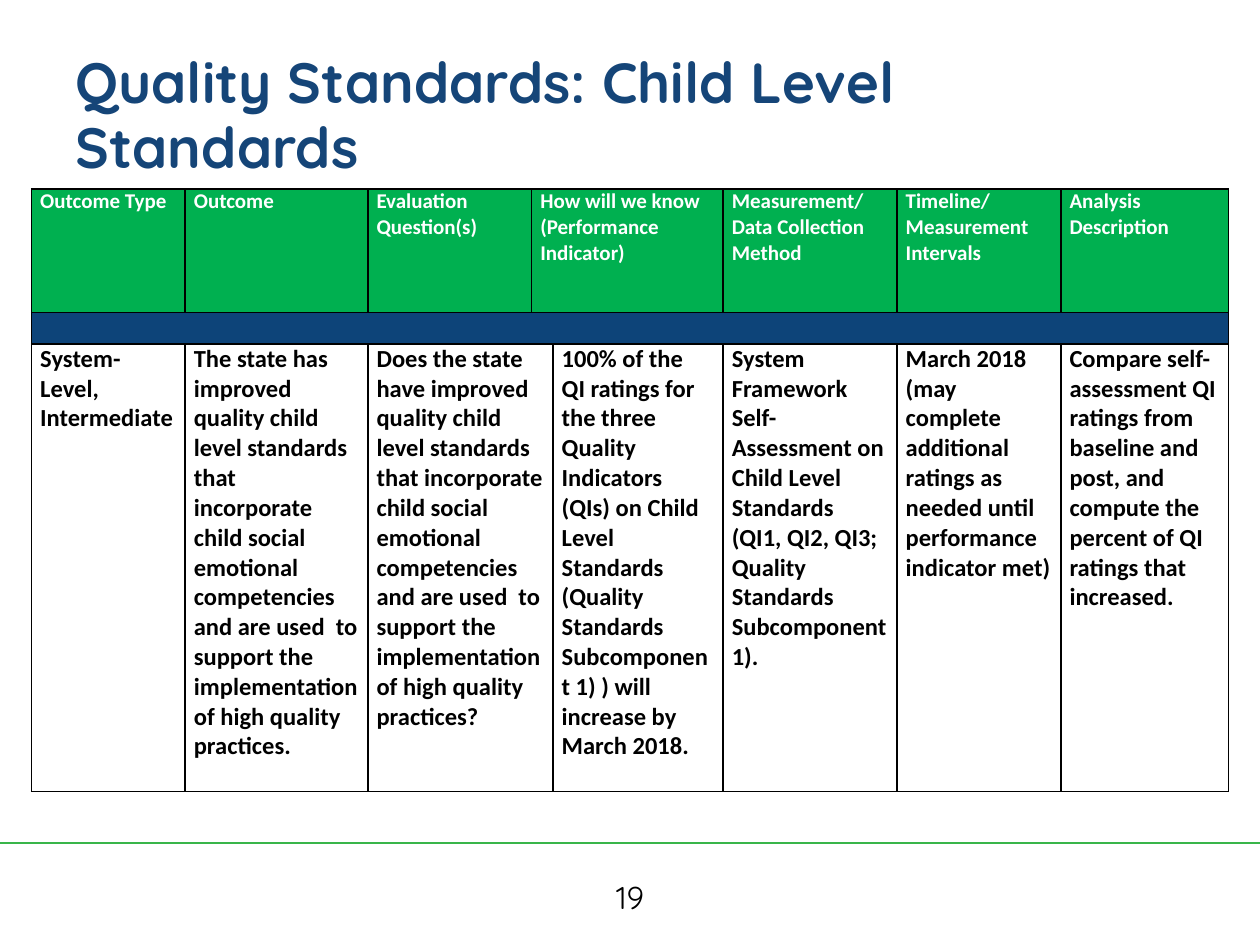
"""Build the slide on child level quality standards."""
from dataclasses import dataclass

from lxml import etree
from pptx import Presentation
from pptx.dml.color import RGBColor
from pptx.enum.shapes import MSO_CONNECTOR
from pptx.enum.text import MSO_ANCHOR, MSO_AUTO_SIZE, PP_ALIGN
from pptx.oxml import parse_xml
from pptx.oxml.ns import nsdecls, qn
from pptx.util import Pt

STRAIGHT = MSO_CONNECTOR.STRAIGHT
TOP, MIDDLE = MSO_ANCHOR.TOP, MSO_ANCHOR.MIDDLE
LEFT, CENTER = PP_ALIGN.LEFT, PP_ALIGN.CENTER
NO_FIT = MSO_AUTO_SIZE.NONE

WIDE, HIGH = 720, 540
COLS = [87.8, 104.4, 93.6, 12.2, 97.2, 99.4, 93.6, 95.8]
ROWS = [70.6, 18, 255.6]
HEAD = {
    0: "Outcome Type",
    1: "Outcome",
    2: "Evaluation Question(s)",
    3: "How will we know\n(Performance Indicator)",
    5: "Measurement/\nData Collection Method",
    6: "Timeline/\nMeasurement Intervals",
    7: "Analysis Description",
}
BODY = {
    0: "System-Level,\nIntermediate",
    1: "The state has improved quality child level standards that "
       "incorporate  child social emotional competencies and are used  to "
       "support the implementation of high quality practices.",
    2: "Does the state have improved quality child level standards that "
       "incorporate child social emotional competencies and are used  to "
       "support the implementation of high quality practices?",
    4: "100% of the  QI ratings for the three Quality Indicators (QIs) on "
       "Child Level Standards\n(Quality Standards Subcomponent 1) ) will "
       "increase by March 2018.",
    5: "System Framework Self-Assessment on Child Level Standards "
       "(QI1, QI2, QI3; Quality Standards Subcomponent 1).",
    6: "March 2018\n(may complete additional ratings as needed until "
       "performance indicator met)",
    7: "Compare self-assessment QI ratings from baseline and post, and "
       "compute the percent of QI ratings that increased.",
}
SPANS = [(0, 3, 4), (1, 0, 7), (2, 2, 3)]


@dataclass(frozen=True)
class Theme:
    """Colours, fonts and type sizes."""
    navy: str = "154578"
    band: str = "0D4479"
    green: str = "00B050"
    rule: str = "39B54A"
    black: str = "000000"
    white: str = "FFFFFF"
    face: str = "Quicksand"
    grid: str = "Calibri"
    title: float = 32.4
    head: float = 12
    body: float = 14
    page: float = 18


def apply(item, form):
    """Set each format value on the item."""
    for key, value in form.items():
        setattr(item, key, value)


class Maker:
    """Draw each kind of element on the current slide."""

    def __init__(self, theme, slide):
        self.theme = theme
        self.slide = slide

    def fill_text(self, frame, text, color, align=LEFT, **form):
        """Fill a text frame with styled paragraphs."""
        frame.text = text
        for para in frame.paragraphs:
            para.alignment = align
            for run in para.runs:
                apply(run.font, form)
                run.font.color.rgb = RGBColor.from_string(color)

    def title(self, text, box):
        """Place and style the title."""
        shape = self.slide.shapes.title
        apply(shape, dict(zip(("left", "top", "width", "height"), map(Pt, box))))
        frame = shape.text_frame
        apply(frame, {"word_wrap": True, "auto_size": NO_FIT,
                      "vertical_anchor": MIDDLE, "margin_right": Pt(12)})
        self.fill_text(frame, text, self.theme.navy, name=self.theme.face,
                       size=Pt(self.theme.title), bold=True)
        frame.paragraphs[0].line_spacing = 0.96

    def label(self, text, box):
        """Add a centred text box."""
        frame = self.slide.shapes.add_textbox(*map(Pt, box)).text_frame
        frame.word_wrap = True
        self.fill_text(frame, text, self.theme.black, CENTER,
                       name=self.theme.face, size=Pt(self.theme.page))

    def rule(self, y):
        """Draw a line across the slide."""
        line = self.slide.shapes.add_connector(
            STRAIGHT, Pt(0), Pt(y), Pt(WIDE), Pt(y))
        line.line.color.rgb = RGBColor.from_string(self.theme.rule)
        line.line.width = Pt(1.5)
        etree.SubElement(line._element.spPr, qn("a:effectLst"))

    def edge(self, cell):
        """Put a thin border on all sides of a cell."""
        props = cell._tc.get_or_add_tcPr()
        for spot, side in enumerate(("lnL", "lnR", "lnT", "lnB")):
            props.insert(spot, parse_xml(
                f'<a:{side} {nsdecls("a")} w="{Pt(1)}"><a:solidFill>'
                f'<a:srgbClr val="{self.theme.black}"/></a:solidFill></a:{side}>'))

    def cell(self, cell, text, size, color, fill):
        """Style one cell and its text."""
        apply(cell, {"margin_left": Pt(5), "margin_right": Pt(5),
                     "margin_top": 0, "margin_bottom": 0,
                     "vertical_anchor": TOP})
        if fill:
            cell.fill.solid()
            cell.fill.fore_color.rgb = RGBColor.from_string(fill)
        else:
            cell.fill.background()
        self.edge(cell)
        self.fill_text(cell.text_frame, text, color, name=self.theme.grid,
                       size=Pt(size), bold=True)
        if not text:
            end = etree.SubElement(
                cell.text_frame.paragraphs[0]._p, qn("a:endParaRPr"))
            end.set("sz", str(int(size * 100)))

    def table(self, left, top, looks):
        """Add the table with one look for each row."""
        grid = self.slide.shapes.add_table(
            len(ROWS), len(COLS), Pt(left), Pt(top),
            Pt(sum(COLS)), Pt(sum(ROWS))).table
        apply(grid, {"first_row": False, "horz_banding": False})
        for col, width in zip(grid.columns, COLS):
            col.width = Pt(width)
        for row, high, (texts, *look) in zip(grid.rows, ROWS, looks):
            row.height = Pt(high)
            for spot, cell in enumerate(row.cells):
                self.cell(cell, texts.get(spot, ""), *look)
        for row, first, last in SPANS:
            grid.cell(row, first).merge(grid.cell(row, last))


def main():
    """Make and save the deck."""
    deck = Presentation()
    apply(deck, {"slide_width": Pt(WIDE), "slide_height": Pt(HIGH)})
    theme = Theme()
    maker = Maker(theme, deck.slides.add_slide(deck.slide_layouts[5]))
    maker.rule(481.7)
    maker.label("19", (276, 498, 168, 29))
    maker.title("Quality Standards: Child Level Standards", (36, 21.6, 648, 90))
    maker.table(18, 108, [
        (HEAD, theme.head, theme.white, theme.green),
        ({}, theme.head, theme.white, theme.band),
        (BODY, theme.body, theme.black, None),
    ])
    deck.save("out.pptx")


if __name__ == "__main__":
    main()
